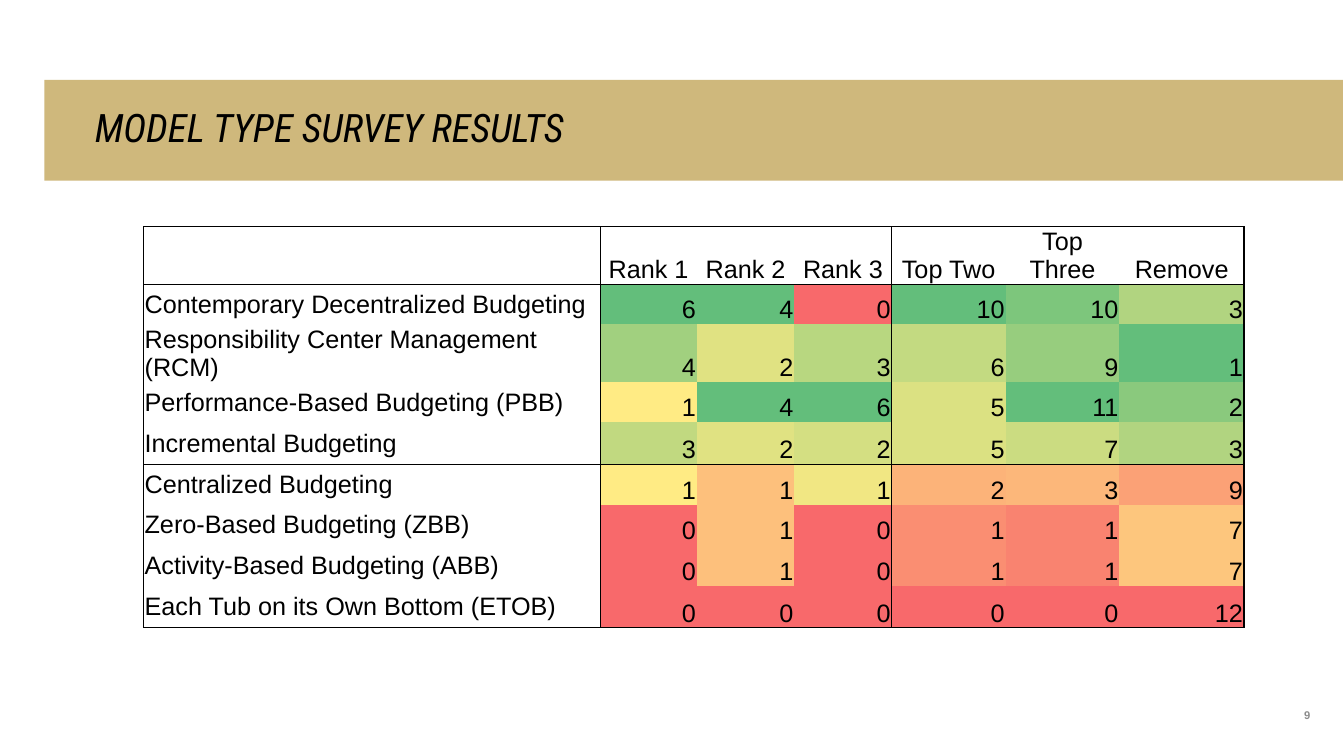
"""Build the slide of model type survey results as a colour-scaled ranking table."""
from collections.abc import Sequence
from dataclasses import dataclass
from typing import Any

from lxml.etree import SubElement
from pptx import Presentation
from pptx.dml.color import RGBColor as Rgb
from pptx.enum.shapes import MSO_SHAPE as Preset
from pptx.enum.text import MSO_ANCHOR as Anchor, PP_ALIGN as Align
from pptx.oxml.ns import qn
from pptx.util import Inches, Pt

SLIDE_WIDTH, SLIDE_HEIGHT = Inches(13.33), Inches(7.5)
GRID_COLUMNS, GRID_ROWS = 160, 90
COLOURS = {"text": "000000", "line": "000000", "band": "CFB87C", "number": "8C8C8C",
           "worst": "F8696B", "middle": "FFEB84", "best": "63BE7B"}
FONTS = {
    "title": {"name": "Roboto Condensed", "size": Pt(28), "italic": True, "bold": False},
    "table": {"name": "Arial", "size": Pt(18), "bold": False},
    "number": {"name": "Arial", "size": Pt(8), "bold": True},
}
HEADINGS = ("Rank 1", "Rank 2", "Rank 3", "Top Two", "Top Three", "Remove")
COLUMN_WIDTHS = (54.36, 11.5, 11.6, 11.6, 13.56, 13.56, 14.82)
ROW_HEIGHTS = (6.36, 4.75, 4.8, 4.8, 5.04, 4.8, 4.8, 4.85, 5)
LEFT_RULES, RIGHT_RULES = {0, 1, 4}, {0, 3, 6}
TOP_RULES, BOTTOM_RULES = {0, 1, 5}, {0, 4, 8}


@dataclass(frozen=True)
class Area:
    left: float
    top: float
    width: float
    height: float

    def box(self) -> tuple[int, int, int, int]:
        return across(self.left), down(self.top), across(self.width), down(self.height)


@dataclass(frozen=True)
class Model:
    name: str
    votes: tuple[int, ...]


MODELS = (
    Model("Contemporary Decentralized Budgeting", (6, 4, 0, 10, 10, 3)),
    Model("Responsibility Center Management (RCM)", (4, 2, 3, 6, 9, 1)),
    Model("Performance-Based Budgeting (PBB)", (1, 4, 6, 5, 11, 2)),
    Model("Incremental Budgeting", (3, 2, 2, 5, 7, 3)),
    Model("Centralized Budgeting", (1, 1, 1, 2, 3, 9)),
    Model("Zero-Based Budgeting (ZBB)", (0, 1, 0, 1, 1, 7)),
    Model("Activity-Based Budgeting (ABB)", (0, 1, 0, 1, 1, 7)),
    Model("Each Tub on its Own Bottom (ETOB)", (0, 0, 0, 0, 0, 12)),
)
BAND = Area(5.28, 9.5, 154.6, 12)
TABLE = Area(17.1, 27, sum(COLUMN_WIDTHS), sum(ROW_HEIGHTS))
NUMBER = Area(145.8, 79.92, 10.2, 6)


def across(columns: float) -> int:
    return round(SLIDE_WIDTH * columns / GRID_COLUMNS)


def down(rows: float) -> int:
    return round(SLIDE_HEIGHT * rows / GRID_ROWS)


def apply(target: Any, values: dict[str, Any]) -> None:
    for name, value in values.items():
        setattr(target, name, value)


def margins(left: float, top: float, right: float, bottom: float) -> dict[str, int]:
    return {"margin_left": across(left), "margin_top": down(top),
            "margin_right": across(right), "margin_bottom": down(bottom)}


def write(frame: Any, text: str, style: str, colour: str, align: Align) -> None:
    paragraph = frame.paragraphs[0]
    paragraph.alignment = align
    run = paragraph.add_run()
    run.text = text
    apply(run.font, FONTS[style])
    run.font.color.rgb = Rgb.from_string(COLOURS[colour])


def blend(start: str, end: str, share: float) -> Rgb:
    pairs = zip(Rgb.from_string(COLOURS[start]), Rgb.from_string(COLOURS[end]))
    return Rgb(*(round(low + (high - low) * share) for low, high in pairs))


def scale_colour(value: int, votes: Sequence[int], reverse: bool) -> Rgb:
    ordered = sorted(votes)
    half = len(ordered) // 2
    median = (ordered[half - 1] + ordered[half]) / 2
    edge = ordered[-1] if value > median else ordered[0]
    share = (value - median) / (edge - median)
    return blend("middle", "best" if (value > median) != reverse else "worst", share)


def draw_borders(cell: Any, row: int, column: int) -> None:
    sides = {"a:lnL": column in LEFT_RULES, "a:lnR": column in RIGHT_RULES,
             "a:lnT": row in TOP_RULES, "a:lnB": row in BOTTOM_RULES}
    properties = cell._tc.get_or_add_tcPr()
    for tag, visible in sides.items():
        line = SubElement(properties, qn(tag), w=str(Pt(1)))
        if visible:
            fill = SubElement(line, qn("a:solidFill"))
            SubElement(fill, qn("a:srgbClr"), val=COLOURS["line"])
        else:
            SubElement(line, qn("a:noFill"))


def fill_cell(cell: Any, row: int, column: int) -> None:
    draw_borders(cell, row, column)
    apply(cell, margins(0.12, 0.12, 0.12, 0))
    cell.vertical_anchor = Anchor.MIDDLE if column == 0 else Anchor.BOTTOM
    cell.fill.background()
    if row == 0:
        text, align = ("", *HEADINGS)[column], Align.CENTER
    elif column == 0:
        text, align = MODELS[row - 1].name, Align.LEFT
    else:
        votes = [model.votes[column - 1] for model in MODELS]
        value = votes[row - 1]
        text, align = str(value), Align.RIGHT
        cell.fill.solid()
        cell.fill.fore_color.rgb = scale_colour(value, votes, HEADINGS[column - 1] == "Remove")
    if text:
        write(cell.text_frame, text, "table", "text", align)


def draw_table(slide: Any) -> None:
    table = slide.shapes.add_table(len(ROW_HEIGHTS), len(COLUMN_WIDTHS), *TABLE.box()).table
    apply(table, {"first_row": False, "horz_banding": False})
    for column, width in zip(table.columns, COLUMN_WIDTHS):
        column.width = across(width)
    for row_index, (row, height) in enumerate(zip(table.rows, ROW_HEIGHTS)):
        row.height = down(height)
        for column_index, cell in enumerate(row.cells):
            fill_cell(cell, row_index, column_index)


def draw_title(slide: Any) -> None:
    shape = slide.shapes.add_shape(Preset.RECTANGLE, *BAND.box())
    shape.shadow.inherit = False
    shape.fill.solid()
    shape.fill.fore_color.rgb = Rgb.from_string(COLOURS["band"])
    shape.line.fill.background()
    frame = shape.text_frame
    apply(frame, {"word_wrap": True, "vertical_anchor": Anchor.MIDDLE, **margins(6, 0.6, 12, 0.6)})
    write(frame, "MODEL TYPE SURVEY RESULTS", "title", "text", Align.LEFT)
    frame.paragraphs[0].line_spacing = 0.9


def draw_number(slide: Any) -> None:
    frame = slide.shapes.add_textbox(*NUMBER.box()).text_frame
    apply(frame, {"word_wrap": True, "vertical_anchor": Anchor.BOTTOM, **margins(0, 0, 0, 0)})
    write(frame, "9", "number", "number", Align.RIGHT)


def main() -> None:
    presentation = Presentation()
    apply(presentation, {"slide_width": SLIDE_WIDTH, "slide_height": SLIDE_HEIGHT})
    slide = presentation.slides.add_slide(presentation.slide_layouts[6])
    draw_table(slide)
    draw_title(slide)
    draw_number(slide)
    presentation.save("out.pptx")


if __name__ == "__main__":
    main()
